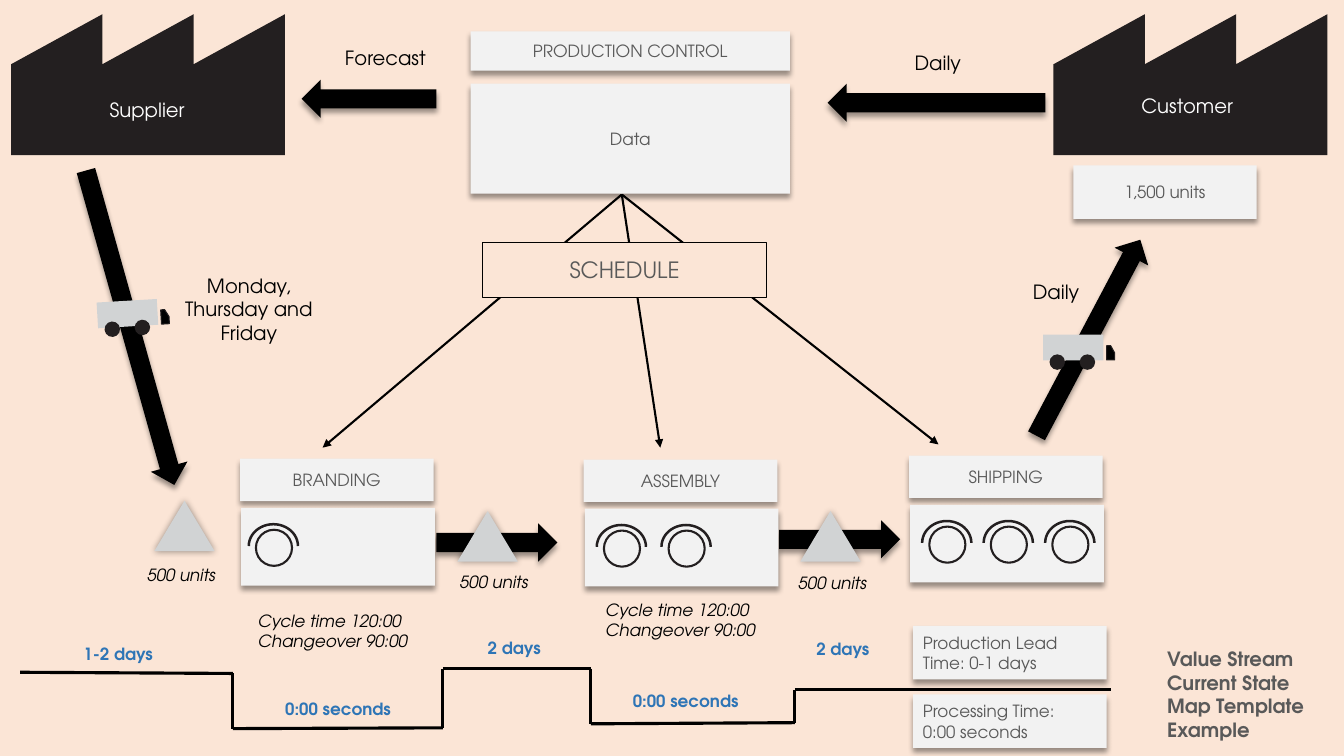
from itertools import pairwise

from lxml.etree import SubElement
from pptx import Presentation
from pptx.dml.color import RGBColor
from pptx.enum.shapes import MSO_CONNECTOR, MSO_SHAPE
from pptx.enum.text import MSO_ANCHOR, MSO_AUTO_SIZE, PP_ALIGN
from pptx.oxml.ns import qn
from pptx.util import Cm, Pt

FONT = "TeX Gyre Adventor"
PEACH, PANEL, SILVER = "FBE5D6", "F2F2F2", "D1D3D4"
BLACK, INK, GREY, BLUE, WHITE = "000000", "231F20", "595959", "2E75B6", "FFFFFF"
CENTER, LEFT = PP_ALIGN.CENTER, PP_ALIGN.LEFT

# All positions and sizes are in centimetres.
TITLE = ("Value Stream Current State Map Template Example", (29.16, 16.18, 4.7, 2.64))
FACTORIES = [(0.28, 0.36), (26.55, 0.36)]
PANELS = [  # text, box, alignment
    ("PRODUCTION CONTROL", (11.86, 0.79, 8.05, 0.99), CENTER),
    ("Data", (11.86, 2.11, 8.05, 2.77), CENTER),
    ("1,500 units", (27.05, 4.17, 4.62, 1.35), CENTER),
    ("Production Lead Time: 0-1 days", (23.01, 15.77, 4.88, 1.35), LEFT),
    ("Processing Time:\v0:00 seconds", (23.01, 17.5, 4.88, 1.35), LEFT),
]
PROCESSES = [  # name, left, top, operators, first operator's left, operator pitch
    ("BRANDING", 6.05, 11.56, 1, 6.27, 0),
    ("ASSEMBLY", 14.71, 11.58, 2, 15.04, 1.63),
    ("SHIPPING", 22.91, 11.48, 3, 23.24, 1.55),
]
FLOWS = [  # centre x, centre y, length, rotation
    (3.28, 8.26, 8.23, 344.3),
    (23.6, 2.59, 5.49, 90),
    (9.3, 2.49, 3.4, 90),
    (12.52, 13.67, 3.05, 270),
    (21.16, 13.59, 3.05, 270),
    (27.43, 8.51, 5.59, 207.9),
]
INVENTORIES = [(3.89, 12.62), (11.53, 12.88), (20.17, 12.88)]
TRUCKS = [(2.46, 7.57, -3.4), (26.29, 8.43, 0)]  # left, top, rotation
SCHEDULE = ("SCHEDULE", (12.17, 6.12, 7.14, 1.37))
SCHEDULE_HUB = (15.67, 4.9)
SCHEDULE_TARGETS = [(8.13, 11.28), (16.64, 11.28), (23.65, 11.2)]
TIMELINE = [
    (0.51, 16.94), (5.87, 16.97), (5.87, 18.36), (11.16, 18.34), (11.16, 16.85),
    (14.89, 16.85), (14.89, 18.24), (20.03, 18.21), (20.03, 17.38), (28, 17.38),
]
LABELS = [  # font settings, then the (text, box) pairs that share them
    (dict(size=14, color=BLACK), [
        ("Daily", (21.36, 1.17, 4.55, 0.81)),
        ("Forecast", (7.44, 1.09, 4.55, 0.71)),
        ("Monday, Thursday and Friday", (4.04, 6.6, 4.47, 2.36)),
        ("Daily", (24.38, 6.93, 4.47, 0.84)),
    ]),
    (dict(size=14, color=WHITE), [
        ("Supplier", (0.28, 2.08, 6.86, 1.37)),
        ("Customer", (26.49, 1.98, 6.86, 1.37)),
    ]),
    (dict(color=BLACK, italic=True), [
        ("500 units", (3.12, 13.94, 2.9, 1.07)),
        ("500 units", (11, 14.12, 2.9, 1.07)),
        ("500 units", (19.53, 14.15, 2.9, 1.07)),
    ]),
    (dict(color=BLACK, italic=True, align=LEFT), [
        ("Cycle time 120:00\nChangeover 90:00", (6.25, 15.19, 4.72, 1.4)),
        ("Cycle time 120:00\nChangeover 90:00", (15.01, 14.91, 4.72, 1.4)),
    ]),
    (dict(color=BLUE, bold=True), [
        ("1-2 days", (0.53, 16.15, 4.9, 0.64)),
        ("0:00 seconds", (6.07, 17.55, 4.9, 0.64)),
        ("2 days", (11.07, 15.98, 3.78, 0.69)),
        ("0:00 seconds", (14.83, 17.35, 4.9, 0.64)),
        ("2 days", (19.35, 16, 3.78, 0.69)),
    ]),
]


def rgb(color):
    return RGBColor.from_string(color)


def cm(values):
    return [Cm(value) for value in values]


def write(holder, text, size=12, color=GREY, align=CENTER, anchor=MSO_ANCHOR.MIDDLE,
          bold=False, italic=False):
    frame = holder.text_frame
    frame.text = text
    frame.word_wrap = True
    frame.auto_size = MSO_AUTO_SIZE.NONE
    frame.vertical_anchor = anchor
    for paragraph in frame.paragraphs:
        paragraph.alignment = align
        for run in paragraph.runs:
            font = run.font
            font.name, font.size, font.color.rgb = FONT, Pt(size), rgb(color)
            font.bold, font.italic = bold, italic


def paint(shape, fill=None, line=None, width=0.75, shadow=None):
    """Set fill, outline and an optional (blur, distance) shadow in points."""
    if fill:
        shape.fill.solid()
        shape.fill.fore_color.rgb = rgb(fill)
    else:
        shape.fill.background()
    if line:
        shape.line.color.rgb = rgb(line)
        shape.line.width = Pt(width)
    else:
        shape.line.fill.background()
    shape.shadow.inherit = False
    if shadow:
        blur, distance = shadow
        effects = shape._element.spPr.find(qn("a:effectLst"))
        outer = SubElement(effects, qn("a:outerShdw"), blurRad=str(Pt(blur)),
                           dist=str(Pt(distance)), dir="5400000", rotWithShape="0")
        SubElement(SubElement(outer, qn("a:srgbClr"), val=BLACK), qn("a:alpha"), val="40000")
    return shape


def preset(shapes, kind, box, **look):
    return paint(shapes.add_shape(kind, *cm(box)), **look)


def outline(shapes, points, left, top, **look):
    """Draw a closed polygon whose points are relative to left, top."""
    start, *rest = [cm((left + x, top + y)) for x, y in points]
    builder = shapes.build_freeform(*start)
    builder.add_line_segments(rest, close=True)
    return paint(builder.convert_to_shape(), **look)


def connect(shapes, start, end, width, arrow=False):
    connector = shapes.add_connector(MSO_CONNECTOR.STRAIGHT, *cm(start + end))
    connector.line.color.rgb = rgb(BLACK)
    connector.line.width = Pt(width)
    if arrow:
        SubElement(connector.line._get_or_add_ln(), qn("a:tailEnd"), type="triangle")
    SubElement(connector._element.spPr, qn("a:effectLst"))


def panel(shapes, text, box, align=CENTER):
    card = preset(shapes, MSO_SHAPE.RECTANGLE, box, fill=PANEL, shadow=(4, 3))
    if text:
        write(card, text, align=align)


def operator(shapes, left, top):
    symbol = shapes.add_group_shape().shapes
    preset(symbol, MSO_SHAPE.OVAL, (left + 0.18, top + 0.14, 0.91, 0.91), line=INK, width=1.5)
    arm = preset(symbol, MSO_SHAPE.ARC, (left, top, 1.24, 1.1), line=INK, width=1.79)
    arm.adjustments[0], arm.adjustments[1] = 108, 0  # 180 to 0 degrees


def truck(shapes, left, top, rotation):
    group = shapes.add_group_shape()
    parts = group.shapes
    preset(parts, MSO_SHAPE.RECTANGLE, (left, top, 1.52, 0.65), fill=SILVER)
    cab = [(0, 0), (0.1, 0), (0.2, 0.18), (0.2, 0.36), (0, 0.36)]
    outline(parts, cab, left + 1.6, top + 0.28, fill=BLACK, line=INK)
    for wheel in (0.16, 0.92):
        preset(parts, MSO_SHAPE.OVAL, (left + wheel, top + 0.5, 0.39, 0.39), fill=INK)
    group.rotation = rotation


def factory(shapes, left, top, bay=2.3, roof=1.26, height=3.55):
    teeth = [point for i in range(3)
             for point in ((i * bay, roof), ((i + 1) * bay, 0))]
    outline(shapes, teeth + [(3 * bay, height), (0, height)], left, top, fill=INK)


def main():
    presentation = Presentation()
    presentation.slide_width, presentation.slide_height = Cm(33.87), Cm(19.05)
    slide = presentation.slides.add_slide(presentation.slide_layouts[5])
    slide.background.fill.solid()
    slide.background.fill.fore_color.rgb = rgb(PEACH)
    shapes = slide.shapes

    name, box = TITLE
    title = shapes.title
    title.left, title.top, title.width, title.height = cm(box)
    write(title, name, size=14, align=LEFT, anchor=MSO_ANCHOR.TOP, bold=True)

    for x, y, length, rotation in FLOWS:
        flow = preset(shapes, MSO_SHAPE.DOWN_ARROW, (x - 0.48, y - length / 2, 0.96, length),
                      fill=BLACK, shadow=(4, 3))
        flow.rotation = rotation
    for target in SCHEDULE_TARGETS:
        connect(shapes, SCHEDULE_HUB, target, 1.5, arrow=True)
    for start, end in pairwise(TIMELINE):
        connect(shapes, start, end, 2.25)

    for text, box, align in PANELS:
        panel(shapes, text, box, align)
    for name, left, top, operators, first, pitch in PROCESSES:
        panel(shapes, name, (left, top, 4.88, 1.07))
        panel(shapes, "", (left + 0.03, top + 1.24, 4.88, 1.96))
        for i in range(operators):
            operator(shapes, first + i * pitch, top + 1.65)

    text, box = SCHEDULE
    schedule = preset(shapes, MSO_SHAPE.RECTANGLE, box, fill=PEACH, line=BLACK)
    write(schedule, text, size=16)
    for left, top in INVENTORIES:
        preset(shapes, MSO_SHAPE.ISOSCELES_TRIANGLE, (left, top, 1.52, 1.27),
               fill=SILVER, shadow=(5, 0))
    for place in FACTORIES:
        factory(shapes, *place)
    for place in TRUCKS:
        truck(shapes, *place)
    for font, labels in LABELS:
        for text, box in labels:
            write(shapes.add_textbox(*cm(box)), text, **font)

    presentation.save("out.pptx")


if __name__ == "__main__":
    main()
